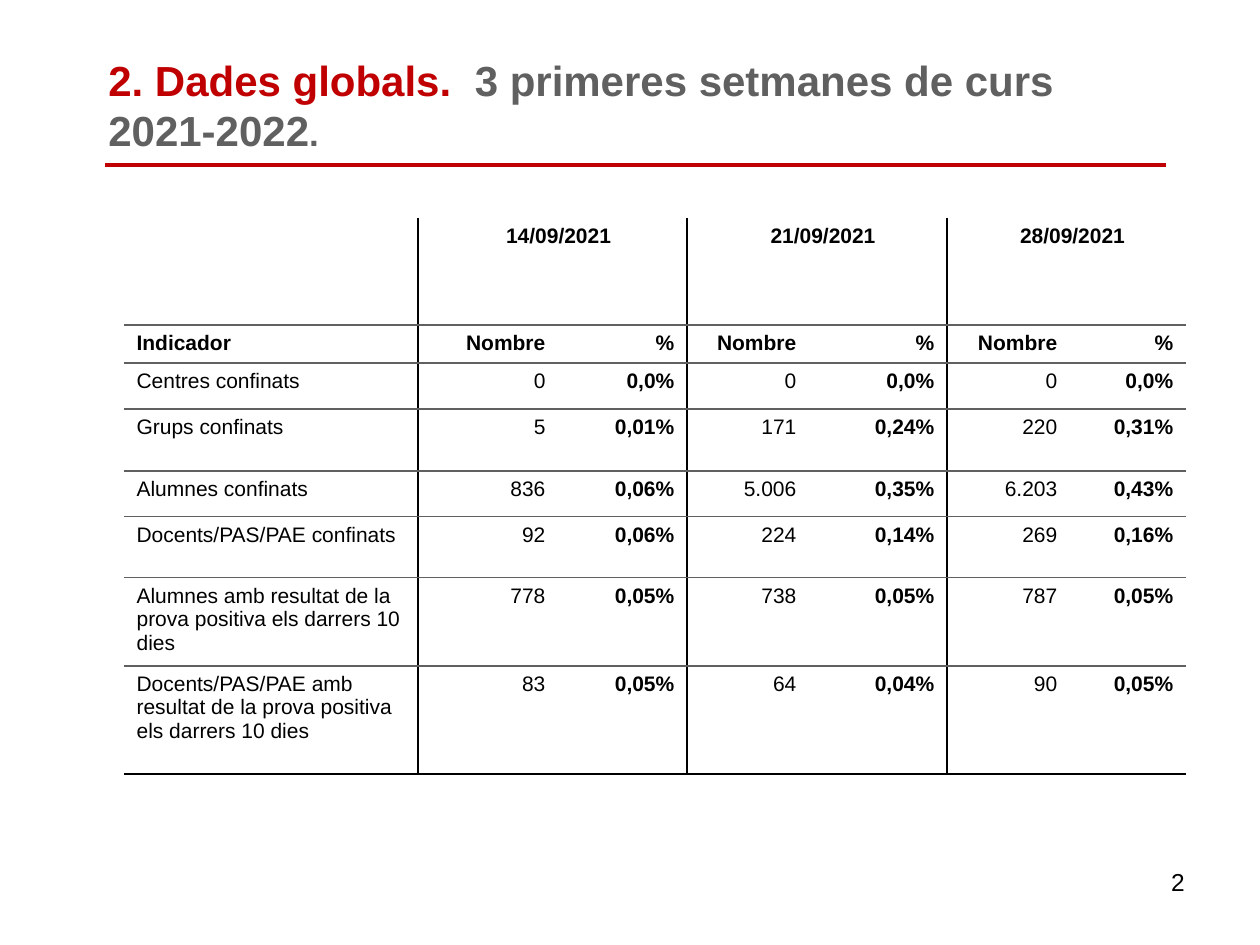
from lxml.etree import SubElement
from pptx import Presentation
from pptx.dml.color import RGBColor
from pptx.enum.shapes import MSO_CONNECTOR
from pptx.enum.text import MSO_ANCHOR, PP_ALIGN
from pptx.oxml import parse_xml
from pptx.oxml.ns import nsdecls, qn
from pptx.util import Pt

RED = RGBColor(0xC0, 0x00, 0x00)
GREY = RGBColor(0x60, 0x60, 0x60)
BLACK = RGBColor(0x00, 0x00, 0x00)
WHITE = RGBColor(0xFF, 0xFF, 0xFF)


def px(length):
    return round(length * 914400 / 126)


def add_run(paragraph, text, size, color, bold=False):
    run = paragraph.add_run()
    run.text = text
    run.font.color.rgb = color
    for key, value in {"name": "Arial", "size": Pt(size), "bold": bold}.items():
        setattr(run.font, key, value)


deck = Presentation()
deck.slide_width, deck.slide_height = px(1260), px(945)
slide = deck.slides.add_slide(deck.slide_layouts[6])

rule = slide.shapes.add_connector(MSO_CONNECTOR.STRAIGHT, px(105), px(165), px(1166), px(165))
rule.line.color.rgb = RED
rule.line.width = Pt(2.25)
SubElement(rule._element.spPr, qn("a:effectLst"))

title = slide.shapes.add_textbox(px(96), px(54), px(1070), px(107)).text_frame
title.word_wrap = True
title.vertical_anchor = MSO_ANCHOR.BOTTOM
for text, size, color in [
    ("2. Dades globals.  ", 24, RED),
    ("3 primeres setmanes de curs 2021-2022", 24, GREY),
    (".", 20, GREY),
]:
    add_run(title.paragraphs[0], text, size, color, True)

page_number = slide.shapes.add_textbox(px(903), px(861), px(294), px(66)).text_frame
page_number.word_wrap = True
page_number.paragraphs[0].alignment = PP_ALIGN.RIGHT
add_run(page_number.paragraphs[0], "2", 14, BLACK)

indicators = [
    ["", "14/09/2021", "", "21/09/2021", "", "28/09/2021", ""],
    ["Indicador"] + ["Nombre", "%"] * 3,
    ["Centres confinats"] + ["0", "0,0%"] * 3,
    ["Grups confinats", "5", "0,01%", "171", "0,24%", "220", "0,31%"],
    ["Alumnes confinats", "836", "0,06%", "5.006", "0,35%", "6.203", "0,43%"],
    ["Docents/PAS/PAE confinats", "92", "0,06%", "224", "0,14%", "269", "0,16%"],
    ["Alumnes amb resultat de la prova positiva els darrers 10 dies",
     "778", "0,05%", "738", "0,05%", "787", "0,05%"],
    ["Docents/PAS/PAE amb resultat de la prova positiva els darrers 10 dies",
     "83", "0,05%", "64", "0,04%", "90", "0,05%"],
]
column_widths = [294, 140, 129, 122, 138, 123, 116]
row_heights = [107, 36, 46, 62, 46, 61, 84, 108]
last_row, last_column = len(row_heights) - 1, len(column_widths) - 1

table = slide.shapes.add_table(
    len(row_heights), len(column_widths), px(124), px(218),
    px(sum(column_widths)), px(sum(row_heights))).table
for flag in ("first_row", "horz_banding"):
    setattr(table, flag, False)
for column, width in zip(table.columns, column_widths):
    column.width = px(width)
for row, height in zip(table.rows, row_heights):
    row.height = px(height)
for date_column in (1, 3, 5):
    table.cell(0, date_column).merge(table.cell(0, date_column + 1))

for r, values in enumerate(indicators):
    for c, value in enumerate(values):
        cell = table.cell(r, c)
        cell.fill.solid()
        cell.fill.fore_color.rgb = WHITE
        paragraph = cell.text_frame.paragraphs[0]
        paragraph.font.size = Pt(12)
        if c:
            cell.margin_left = px(25)
            paragraph.alignment = PP_ALIGN.RIGHT if r else PP_ALIGN.CENTER
        if value:
            is_percent = c > 0 and c % 2 == 0
            add_run(paragraph, value, 12, BLACK, r < 2 or is_percent)
        borders = {
            "lnL": BLACK if c % 2 else None,
            "lnR": BLACK if c % 2 == 0 and c < last_column else None,
            "lnT": GREY if r else None,
            "lnB": BLACK if r == last_row else GREY,
        }
        for position, (side, color) in enumerate(borders.items()):
            paint = f'<a:solidFill><a:srgbClr val="{color}"/></a:solidFill>' if color else "<a:noFill/>"
            border = parse_xml(f'<a:{side} {nsdecls("a")} w="12700">{paint}</a:{side}>')
            cell._tc.get_or_add_tcPr().insert(position, border)

deck.save("out.pptx")
